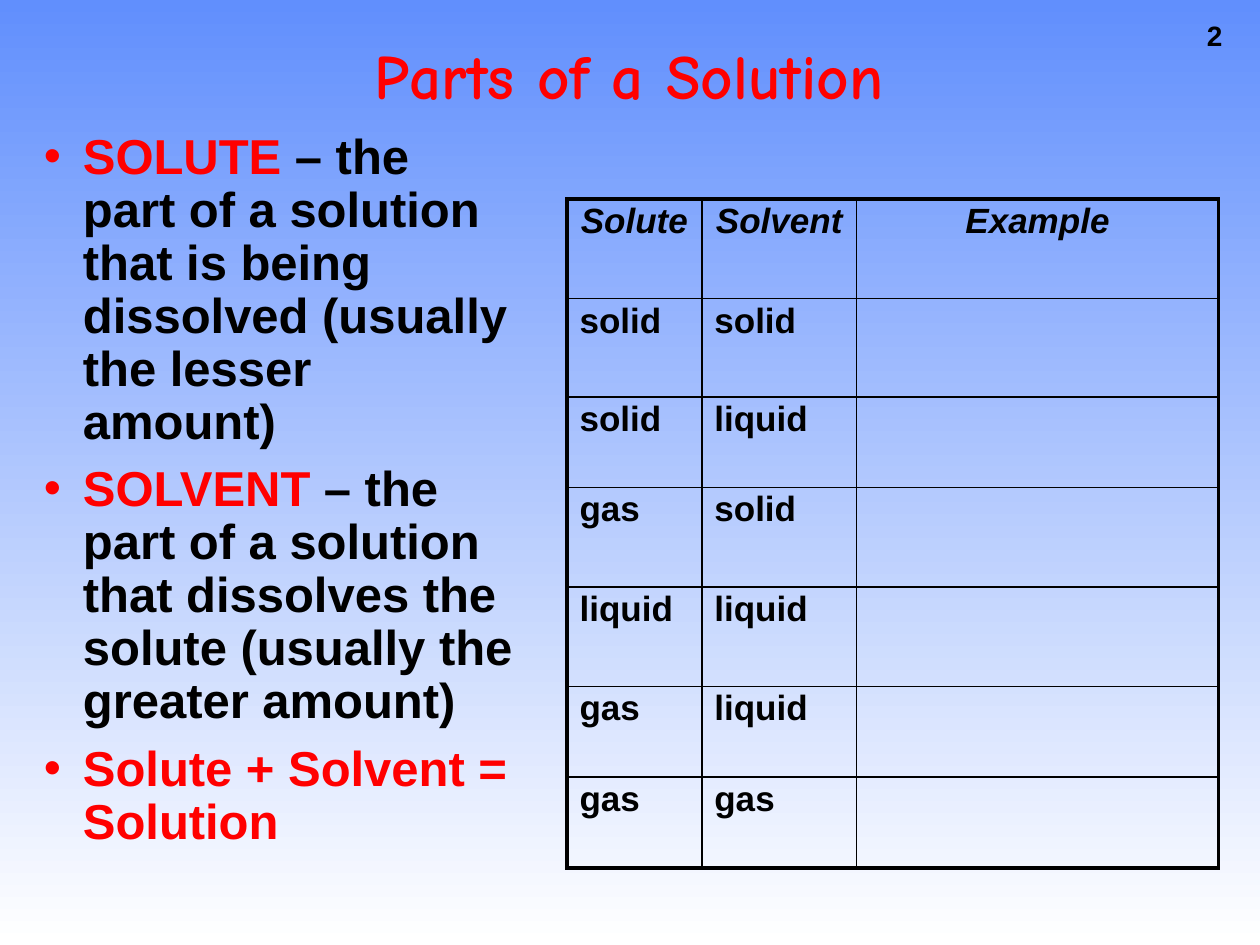
"""Build the "Parts of a Solution" slide with its definitions and table."""
from dataclasses import dataclass

from lxml import etree
from pptx import Presentation
from pptx.dml.color import RGBColor
from pptx.enum.text import MSO_ANCHOR, MSO_AUTO_SIZE, PP_ALIGN
from pptx.oxml.ns import qn
from pptx.util import Inches, Pt

CENTER = PP_ALIGN.CENTER
MIDDLE = MSO_ANCHOR.MIDDLE
GROW = MSO_AUTO_SIZE.SHAPE_TO_FIT_TEXT


@dataclass(frozen=True)
class Theme:
    """Colours, fonts, type sizes and line widths."""
    sky: RGBColor = RGBColor(0x61, 0x8F, 0xFD)
    white: RGBColor = RGBColor(0xFF, 0xFF, 0xFF)
    red: RGBColor = RGBColor(0xFF, 0x00, 0x00)
    black: RGBColor = RGBColor(0x00, 0x00, 0x00)
    font: str = "Arial"
    title_font: str = "Comic Neue"
    number_size: int = 16
    title_size: int = 36
    body_size: int = 28
    table_size: int = 20
    outer_line: float = 2.25
    inner_line: float = 1
    line_spacing: float = 0.9
    space_before: float = 0.3


THEME = Theme()

DEFINITIONS = [
    ("SOLUTE", " – the part of a solution that is being dissolved (usually the lesser amount)"),
    ("SOLVENT", " – the part of a solution that dissolves the solute (usually the greater amount)"),
    ("Solute + Solvent = Solution", ""),
]
COL_WIDTHS = [1.07, 1.23, 2.87]
ROW_HEIGHTS = [0.79, 0.78, 0.72, 0.79, 0.79, 0.72, 0.72]
ROWS = [
    ("Solute", "Solvent", "Example"),
    ("solid", "solid", ""),
    ("solid", "liquid", ""),
    ("gas", "solid", ""),
    ("liquid", "liquid", ""),
    ("gas", "liquid", ""),
    ("gas", "gas", ""),
]


def set_background(slide):
    """Fill the slide with a gradient running from top to bottom."""
    fill = slide.background.fill
    fill.gradient()
    fill.gradient_angle = 270
    for stop, color in zip(fill.gradient_stops, (THEME.sky, THEME.white)):
        stop.color.rgb = color


def style_run(r, size, color, font=THEME.font, italic=False):
    """Format a run in bold."""
    r.font.name = font
    r.font.size = Pt(size)
    r.font.color.rgb = color
    r.font.bold = True
    r.font.italic = italic


def space_paragraph(p, size):
    """Tighten the lines and add a gap in proportion to the type size."""
    p.line_spacing = THEME.line_spacing
    p.space_before = Pt(size * THEME.space_before)


def add_text(slide, left, top, width, height, wrap=True):
    """Add an empty text box and return its text frame."""
    sp = slide.shapes.add_textbox(Inches(left), Inches(top), Inches(width), Inches(height))
    tf = sp.text_frame
    tf.word_wrap = wrap
    return tf


def add_slide_number(slide):
    """Add the number in the top right corner."""
    tf = add_text(slide, 9.48, 0.1, 0.47, 0.36, wrap=False)
    tf.auto_size = GROW
    tf.text = "2"
    style_run(tf.paragraphs[0].runs[0], THEME.number_size, THEME.black)


def add_title(slide):
    """Add the centred title."""
    tf = add_text(slide, 1.08, 0, 7.83, 1.25)
    tf.vertical_anchor = MIDDLE
    tf.text = "Parts of a Solution"
    p = tf.paragraphs[0]
    p.alignment = CENTER
    p.line_spacing = THEME.line_spacing
    style_run(p.runs[0], THEME.title_size, THEME.red, THEME.title_font)


def add_bullet(p):
    """Give a paragraph a hanging bullet."""
    pPr = p._p.get_or_add_pPr()
    pPr.set("marL", str(Inches(0.31)))
    pPr.set("indent", str(-Inches(0.31)))
    etree.SubElement(pPr, qn("a:buFont"), typeface=THEME.font)
    etree.SubElement(pPr, qn("a:buChar"), char="•")


def add_definitions(slide):
    """Add the bulleted definitions with their terms in red."""
    tf = add_text(slide, 0.25, 1, 3.92, 5.33)
    for i, (term, meaning) in enumerate(DEFINITIONS):
        p = tf.add_paragraph() if i else tf.paragraphs[0]
        space_paragraph(p, THEME.body_size)
        add_bullet(p)
        for text, color in ((term, THEME.red), (meaning, THEME.black)):
            if text:
                r = p.add_run()
                r.text = text
                style_run(r, THEME.body_size, color)


def set_borders(cell, outer_sides):
    """Draw the four cell borders, heavier on the table's outer sides."""
    tcPr = cell._tc.get_or_add_tcPr()
    for side in "LRTB":
        width = THEME.outer_line if side in outer_sides else THEME.inner_line
        ln = etree.SubElement(tcPr, qn(f"a:ln{side}"), w=str(Pt(width)))
        fill = etree.SubElement(ln, qn("a:solidFill"))
        etree.SubElement(fill, qn("a:srgbClr"), val=str(THEME.black))


def fill_cell(cell, text, header):
    """Write and format the text of a cell."""
    cell.text = text
    p = cell.text_frame.paragraphs[0]
    space_paragraph(p, THEME.table_size)
    if header:
        p.alignment = CENTER
    for r in p.runs:
        style_run(r, THEME.table_size, THEME.black, italic=header)


def add_solution_table(slide):
    """Add the table of solute and solvent states."""
    n_rows, n_cols = len(ROWS), len(COL_WIDTHS)
    table = slide.shapes.add_table(
        n_rows, n_cols, Inches(4.5), Inches(1.58),
        Inches(sum(COL_WIDTHS)), Inches(sum(ROW_HEIGHTS))).table
    table.first_row = False
    table.horz_banding = False
    for col, width in zip(table.columns, COL_WIDTHS):
        col.width = Inches(width)
    for i, (row, height) in enumerate(zip(table.rows, ROW_HEIGHTS)):
        row.height = Inches(height)
        for j, cell in enumerate(row.cells):
            edges = {"L": j == 0, "R": j == n_cols - 1, "T": i == 0, "B": i == n_rows - 1}
            set_borders(cell, [side for side, outer in edges.items() if outer])
            cell.fill.background()
            fill_cell(cell, ROWS[i][j], header=i == 0)


def main():
    """Build and save the slide."""
    prs = Presentation()
    prs.slide_width, prs.slide_height = Inches(10), Inches(7.5)
    slide = prs.slides.add_slide(prs.slide_layouts[6])
    set_background(slide)
    add_slide_number(slide)
    add_title(slide)
    add_definitions(slide)
    add_solution_table(slide)
    prs.save("out.pptx")


if __name__ == "__main__":
    main()
